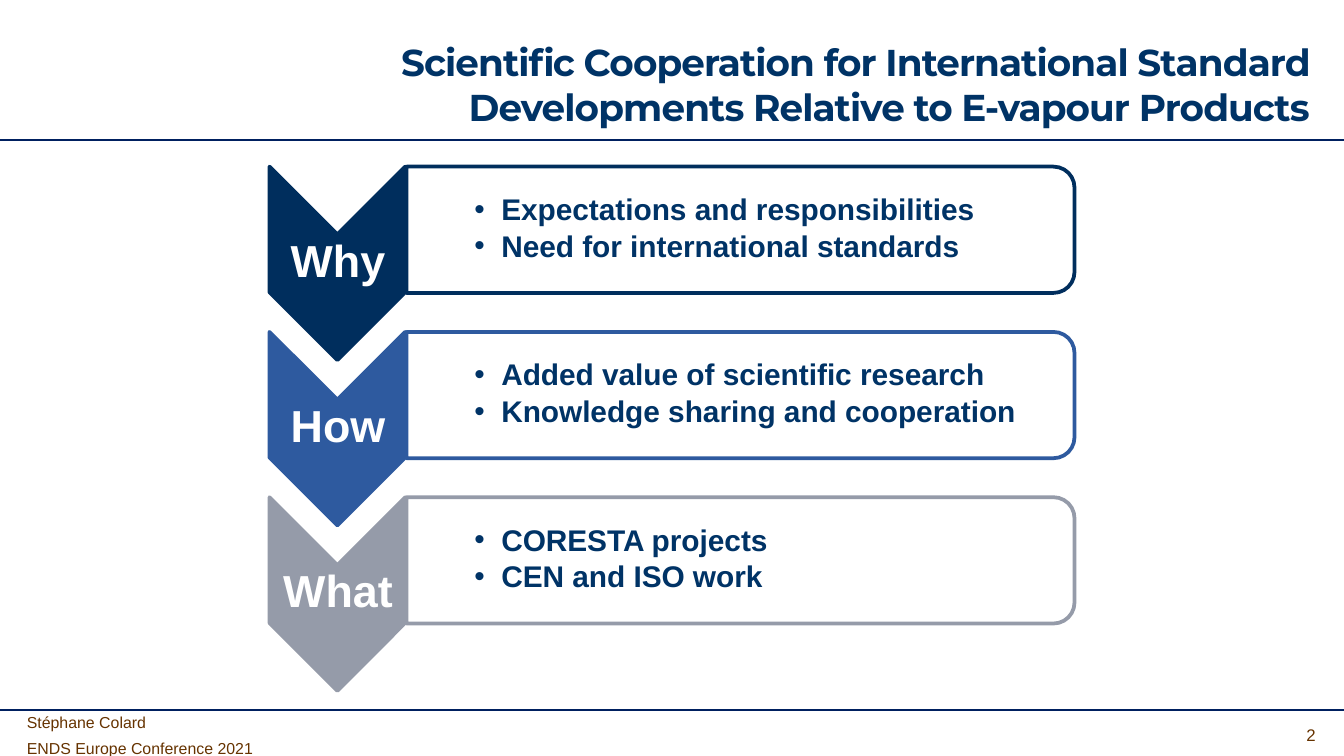
from lxml import etree
from pptx import Presentation
from pptx.dml.color import RGBColor
from pptx.enum.shapes import MSO_CONNECTOR as Connector, MSO_SHAPE as Shape
from pptx.enum.text import MSO_ANCHOR as Anchor, MSO_AUTO_SIZE as AutoSize, PP_ALIGN as Align
from pptx.oxml.ns import qn
from pptx.util import Inches, Pt

RULE_BLUE = RGBColor(0x00, 0x20, 0x60)
TEXT_BLUE = RGBColor(0x00, 0x33, 0x66)
BROWN = RGBColor(0x66, 0x33, 0x00)
WHITE = RGBColor(0xFF, 0xFF, 0xFF)
NAVY = RGBColor(0x00, 0x2E, 0x5D)
BLUE = RGBColor(0x2E, 0x5A, 0x9F)
GREY = RGBColor(0x95, 0x9B, 0xA9)

STEPS = [
    ("Why", NAVY, ["Expectations and responsibilities", "Need for international standards"]),
    ("How", BLUE, ["Added value of scientific research", "Knowledge sharing and cooperation"]),
    ("What", GREY, ["CORESTA projects", "CEN and ISO work"]),
]
STEP_TOP, STEP_PITCH = 1.24, 1.23


def write(box, lines, margins, align, font, bullet=False, **spacing):
    """Fill a text box with one formatted paragraph per line; margins are left, top, right, bottom."""
    frame = box.text_frame
    frame.word_wrap = True
    frame.auto_size = AutoSize.NONE
    frame.vertical_anchor = Anchor.MIDDLE
    for side, margin in zip(("left", "top", "right", "bottom"), margins):
        setattr(frame, f"margin_{side}", Inches(margin))
    for index, line in enumerate(lines):
        para = frame.paragraphs[0] if index == 0 else frame.add_paragraph()
        para.alignment = align
        for name, value in spacing.items():
            if index or name != "space_before":
                setattr(para, name, value)
        if bullet:
            props = para._p.get_or_add_pPr()
            props.set("marL", str(Inches(0.59)))
            props.set("indent", str(Inches(-0.2)))
            etree.SubElement(props, qn("a:buFont")).set("typeface", "Arial")
            etree.SubElement(props, qn("a:buChar")).set("char", "•")
        span = para.add_run()
        span.text = line
        for name, value in font.items():
            if name == "color":
                span.font.color.rgb = value
            else:
                setattr(span.font, name, value)


def add_turned_shape(kind, center_x, center_y, width, height, fill, line):
    """Add a shape turned a quarter clockwise; width and height are before the turn."""
    shape = page.shapes.add_shape(kind, Inches(center_x - width / 2), Inches(center_y - height / 2),
                                  Inches(width), Inches(height))
    shape.rotation = 90
    shape.shadow.inherit = False
    shape.fill.solid()
    shape.fill.fore_color.rgb = fill
    shape.line.color.rgb = line
    shape.line.width = Pt(2)
    return shape


deck = Presentation()
deck.slide_width = Inches(10)
deck.slide_height = Inches(10 * 9 / 16)
page = deck.slides.add_slide(deck.slide_layouts[5])

# Header and footer rules
for y in (1.04, 5.28):
    rule = page.shapes.add_connector(Connector.STRAIGHT, 0, Inches(y), Inches(10), Inches(y))
    rule.line.color.rgb = RULE_BLUE
    rule.line.width = Pt(1)
    etree.SubElement(rule._element.spPr, qn("a:effectLst"))

# Title
title = page.shapes.title
title.left, title.top, title.width, title.height = map(Inches, (2.4, 0.29, 7.43, 0.67))
write(title, ["Scientific Cooperation for International Standard Developments Relative to E-vapour Products"],
      (0.09, 0.04, 0.09, 0.04), Align.RIGHT,
      {"name": "Montserrat", "size": Pt(20), "bold": True, "color": TEXT_BLUE})
title.text_frame.paragraphs[0].runs[0].font._element.set("spc", "-50")

# Footer
footer = page.shapes.add_textbox(Inches(0.2), Inches(5.31), Inches(2.44), Inches(0.32))
write(footer, ["Stéphane Colard", "ENDS Europe Conference 2021"], (0, 0.03, 0.09, 0.03), Align.LEFT,
      {"name": "Arial", "size": Pt(8.5), "color": BROWN}, space_before=Pt(4.25))
number = page.shapes.add_textbox(Inches(8.55), Inches(5.33), Inches(1.33), Inches(0.27))
write(number, ["2"], (0.09, 0.04, 0.09, 0.04), Align.RIGHT,
      {"name": "Arial", "size": Pt(9), "color": BROWN})

# Steps: a downward chevron with a bulleted panel beside it
for index, (name, color, points) in enumerate(STEPS):
    top = STEP_TOP + index * STEP_PITCH
    add_turned_shape(Shape.CHEVRON, 2.51, top + 0.72, 1.44, 1.01, color, color)
    label = page.shapes.add_textbox(Inches(2.01), Inches(top + 0.5), Inches(1.01), Inches(0.43))
    write(label, [name], (0.02,) * 4, Align.CENTER,
          {"name": "Arial", "size": Pt(24), "bold": True, "color": WHITE}, line_spacing=0.9)

    panel = add_turned_shape(Shape.ROUND_2_SAME_RECTANGLE, 5.51, top + 0.47, 0.94, 4.97, WHITE, color)
    panel_color = panel.fill._xPr.find(qn("a:solidFill"))[0]
    etree.SubElement(panel_color, qn("a:alpha")).set("val", "90000")
    body = page.shapes.add_textbox(Inches(3.02), Inches(top + 0.04), Inches(4.93), Inches(0.85))
    write(body, points, (0.12, 0.01, 0.01, 0.01), Align.LEFT,
          {"name": "Arial", "size": Pt(16), "bold": True, "color": TEXT_BLUE},
          bullet=True, line_spacing=0.9, space_after=Pt(2.4))

deck.save("out.pptx")
